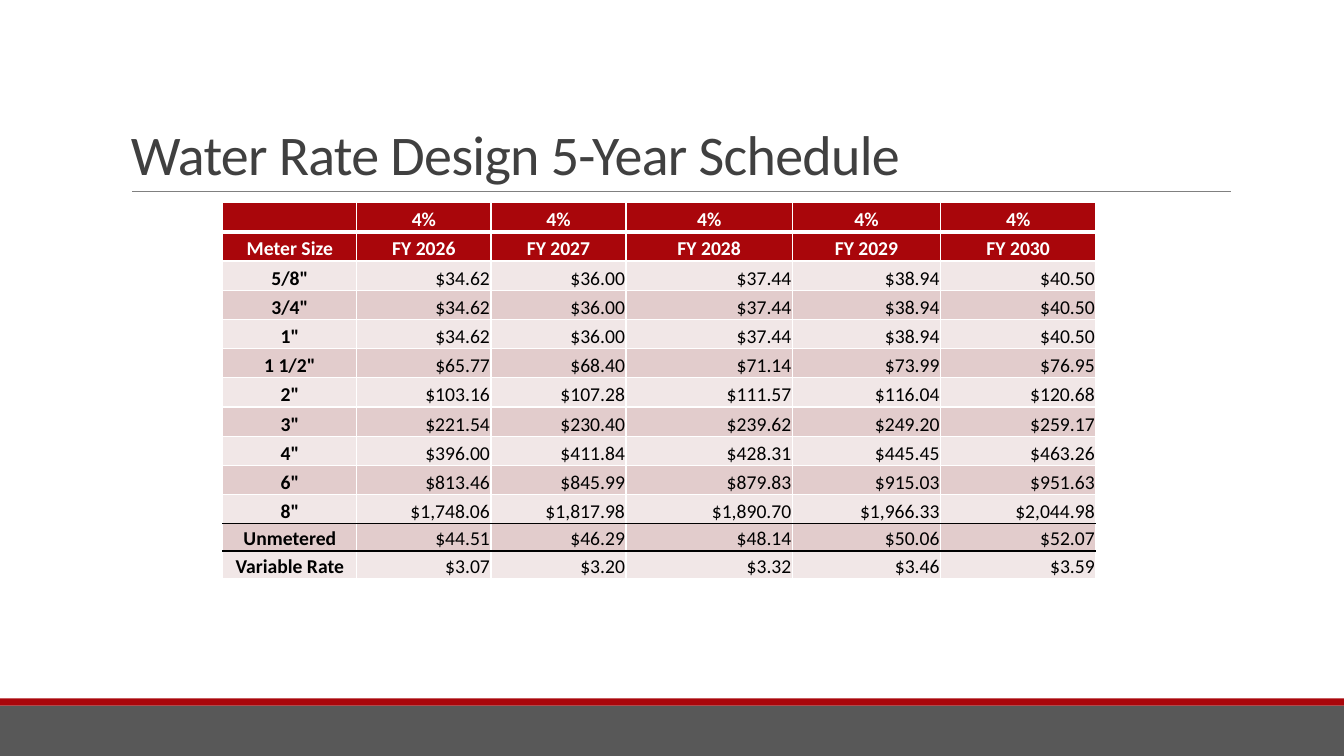
from lxml import etree
from pptx import Presentation
from pptx import util as u
from pptx.dml.color import RGBColor
from pptx.enum import shapes, text
from pptx.oxml import ns


def rgb(value):
    return RGBColor.from_string(value)


def border(cell, side, color, width):
    ln = etree.SubElement(cell._tc.get_or_add_tcPr(), ns.qn("a:" + side), w=str(u.Pt(width)))
    fill = etree.SubElement(ln, ns.qn("a:solidFill"))
    etree.SubElement(fill, ns.qn("a:srgbClr"), val=color)


prs = Presentation()
prs.slide_width = u.Inches(13.33)
prs.slide_height = u.Inches(7.5)
s = prs.slides.add_slide(prs.slide_layouts[6])

for top, height, color in [(7, 0.5, "585858"), (6.93, 0.07, "A9060B")]:
    sp = s.shapes.add_shape(shapes.MSO_SHAPE.RECTANGLE, 0, u.Inches(top), prs.slide_width, u.Inches(height))
    sp.shadow.inherit = False
    sp.fill.solid()
    sp.fill.fore_color.rgb = rgb(color)
    sp.line.fill.background()

rule = s.shapes.add_connector(shapes.MSO_CONNECTOR.STRAIGHT, u.Inches(1.31), u.Inches(1.9), u.Inches(12.21), u.Inches(1.9))
rule.line.color.rgb = rgb("808080")
rule.line.width = u.Pt(0.5)
etree.SubElement(rule._element.spPr, ns.qn("a:effectLst"))

title = s.shapes.add_textbox(u.Inches(1.2), u.Inches(0.31), u.Inches(11), u.Inches(1.59))
tf = title.text_frame
tf.word_wrap = True
tf.vertical_anchor = text.MSO_ANCHOR.BOTTOM
p = tf.paragraphs[0]
p.line_spacing = 0.85
r = p.add_run()
r.text = "Water Rate Design 5-Year Schedule"
r._r.get_or_add_rPr().set("spc", "-50")
p.font.name = "Calibri"
p.font.size = u.Pt(40)
p.font.color.rgb = rgb("404040")

rates = [
    ["", "4%", "4%", "4%", "4%", "4%"],
    ["Meter Size", "FY 2026", "FY 2027", "FY 2028", "FY 2029", "FY 2030"],
    ['5/8"', "$34.62", "$36.00", "$37.44", "$38.94", "$40.50"],
    ['3/4"', "$34.62", "$36.00", "$37.44", "$38.94", "$40.50"],
    ['1"', "$34.62", "$36.00", "$37.44", "$38.94", "$40.50"],
    ['1 1/2"', "$65.77", "$68.40", "$71.14", "$73.99", "$76.95"],
    ['2"', "$103.16", "$107.28", "$111.57", "$116.04", "$120.68"],
    ['3"', "$221.54", "$230.40", "$239.62", "$249.20", "$259.17"],
    ['4"', "$396.00", "$411.84", "$428.31", "$445.45", "$463.26"],
    ['6"', "$813.46", "$845.99", "$879.83", "$915.03", "$951.63"],
    ['8"', "$1,748.06", "$1,817.98", "$1,890.70", "$1,966.33", "$2,044.98"],
    ["Unmetered", "$44.51", "$46.29", "$48.14", "$50.06", "$52.07"],
    ["Variable Rate", "$3.07", "$3.20", "$3.32", "$3.46", "$3.59"],
]
widths = [1.33, 1.33, 1.34, 1.65, 1.47, 1.54]
heights = [0.29] * 11 + [0.27] * 2
row_lines = [("FFFFFF", 1)] * 14
row_lines[1] = ("FFFFFF", 3)
row_lines[11] = row_lines[12] = ("000000", 1)

table = s.shapes.add_table(
    len(rates), len(widths), u.Inches(2.21), u.Inches(2.01), u.Inches(sum(widths)), u.Inches(sum(heights))
).table
table.first_row = False
table.horz_banding = False
for column, width in zip(table.columns, widths):
    column.width = u.Inches(width)

for i, row in enumerate(rates):
    table.rows[i].height = u.Inches(heights[i])
    header = i < 2
    for j, value in enumerate(row):
        cell = table.cell(i, j)
        cell.margin_left = cell.margin_right = cell.margin_top = u.Inches(0.01)
        cell.margin_bottom = 0
        cell.vertical_anchor = text.MSO_ANCHOR.BOTTOM
        border(cell, "lnL", "FFFFFF", 1)
        border(cell, "lnR", "FFFFFF", 1)
        border(cell, "lnT", *row_lines[i])
        border(cell, "lnB", *row_lines[i + 1])
        cell.fill.solid()
        cell.fill.fore_color.rgb = rgb("A9060B" if header else ("F1E7E7", "E2CCCC")[i % 2])
        p = cell.text_frame.paragraphs[0]
        if value:
            p.text = value
        else:
            etree.SubElement(p._p, ns.qn("a:endParaRPr"), sz="1400")
        p.alignment = text.PP_ALIGN.CENTER if header or j == 0 else text.PP_ALIGN.RIGHT
        p.font.name = "Calibri"
        p.font.size = u.Pt(14)
        p.font.bold = header or j == 0
        p.font.color.rgb = rgb("FFFFFF" if header else "000000")

prs.save("out.pptx")
